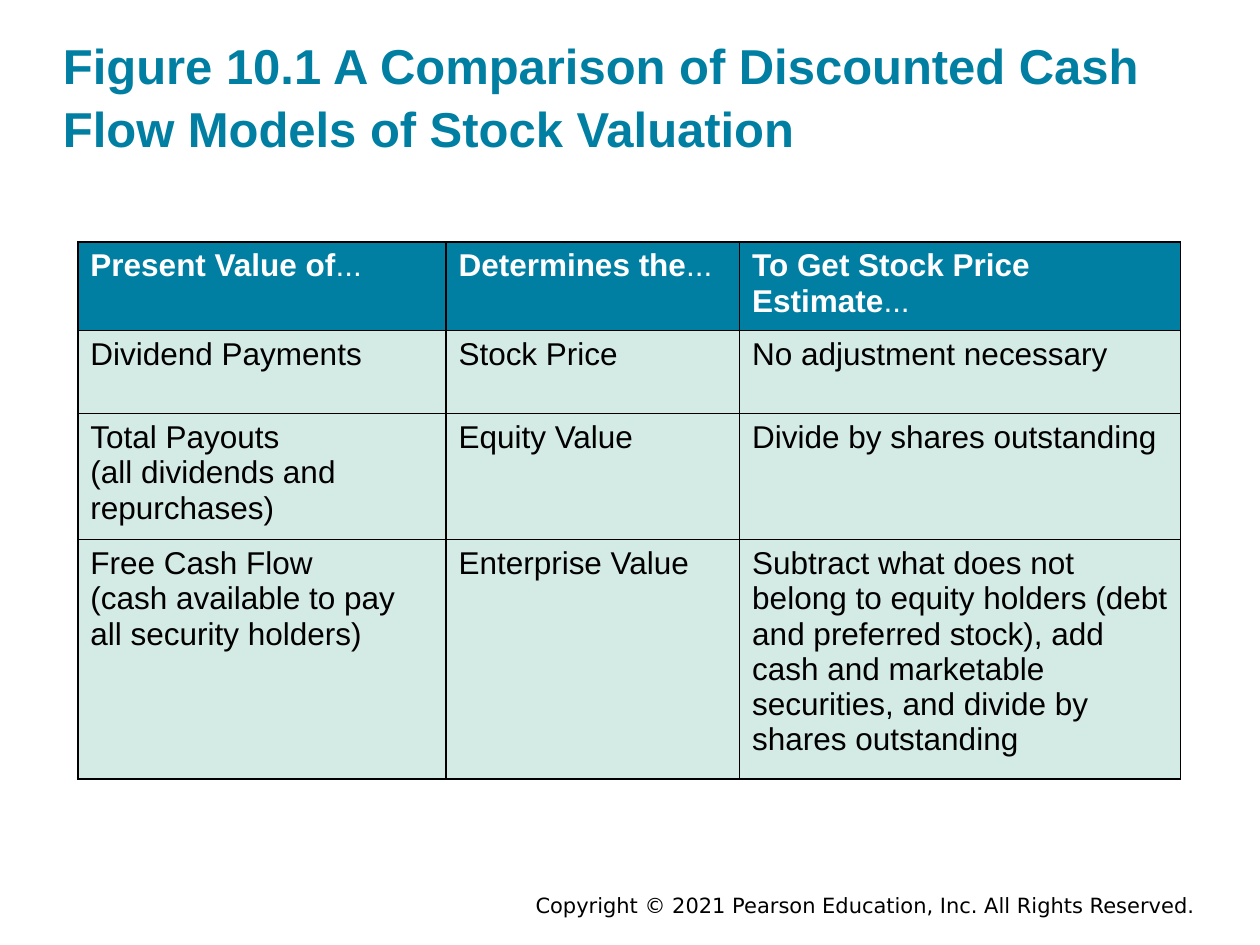
from pptx import Presentation
from pptx.dml.color import RGBColor
from pptx.enum.text import MSO_ANCHOR as Anchor, PP_ALIGN as Align
from pptx.oxml import parse_xml
from pptx.oxml.ns import nsdecls
from pptx.util import Cm, Pt

TEAL, MINT, WHITE, BLACK = "007FA3", "D4EAE4", "FFFFFF", "000000"
HEADERS = ["Present Value of", "Determines the", "To Get Stock Price Estimate"]
MODELS = [
    ["Dividend Payments", "Stock Price", "No adjustment necessary"],
    ["Total Payouts\n(all dividends and repurchases)", "Equity Value",
     "Divide by shares outstanding"],
    ["Free Cash Flow\n(cash available to pay\nall security holders)",
     "Enterprise Value",
     "Subtract what does not belong to equity holders (debt and preferred "
     "stock), add cash and marketable securities, and divide by shares "
     "outstanding"],
]
COL_WIDTHS = [7.42, 5.92, 8.89]
ROW_HEIGHTS = [1.63, 1.68, 1.68, 1.68]


def rgb(color):
    return RGBColor.from_string(color)


def style_runs(tf, size, color, bold=False, font="Arial"):
    for p in tf.paragraphs:
        for r in p.runs:
            r.font.name, r.font.size, r.font.bold = font, Pt(size), bold
            r.font.color.rgb = rgb(color)


def add_text(slide, text, left, top, width, height):
    tf = slide.shapes.add_textbox(Cm(left), Cm(top), Cm(width), Cm(height)).text_frame
    tf.word_wrap = True
    tf.text = text
    return tf


def add_title(slide, text):
    tf = add_text(slide, text, 1.27, 0.66, 23.29, 2.51)
    tf.margin_left = tf.margin_right = tf.margin_top = tf.margin_bottom = 0
    tf.vertical_anchor = Anchor.BOTTOM
    tf.paragraphs[0].line_spacing = 1.07
    style_runs(tf, 28, TEAL, bold=True)


def add_copyright(slide, text):
    tf = add_text(slide, text, 10.01, 17.86, 14.33, 0.76)
    tf.paragraphs[0].alignment = Align.RIGHT
    style_runs(tf, 12, BLACK, font="DejaVu Sans")


def format_cell(cell, fill):
    # Borders come before the fill in the cell properties
    tc_pr = cell._tc.get_or_add_tcPr()
    for side in ("lnL", "lnR", "lnT", "lnB"):
        tc_pr.append(parse_xml(
            f'<a:{side} {nsdecls("a")} w="{Pt(1)}"><a:solidFill>'
            f'<a:srgbClr val="{BLACK}"/></a:solidFill></a:{side}>'))
    cell.fill.solid()
    cell.fill.fore_color.rgb = rgb(fill)


def add_models_table(slide):
    rows = [HEADERS] + MODELS
    table = slide.shapes.add_table(
        len(rows), len(HEADERS), Cm(1.57), Cm(4.88),
        Cm(sum(COL_WIDTHS)), Cm(sum(ROW_HEIGHTS))).table
    for column, width in zip(table.columns, COL_WIDTHS):
        column.width = Cm(width)
    for i, (row, height) in enumerate(zip(rows, ROW_HEIGHTS)):
        table.rows[i].height = Cm(height)
        is_header = i == 0
        for j, text in enumerate(row):
            cell = table.cell(i, j)
            tf = cell.text_frame
            tf.text = text
            if is_header:
                tf.paragraphs[0].add_run().text = "..."
            style_runs(tf, 18, WHITE if is_header else BLACK)
            tf.paragraphs[0].runs[0].font.bold = is_header
            format_cell(cell, TEAL if is_header else MINT)


def main():
    prs = Presentation()
    prs.slide_width, prs.slide_height = Cm(25.4), Cm(19.05)
    slide = prs.slides.add_slide(prs.slide_layouts[6])
    add_copyright(slide, "Copyright © 2021 Pearson Education, Inc. All Rights Reserved.")
    add_title(slide, "Figure 10.1 A Comparison of Discounted Cash Flow Models "
                     "of Stock Valuation")
    add_models_table(slide)
    prs.save("out.pptx")


if __name__ == "__main__":
    main()
